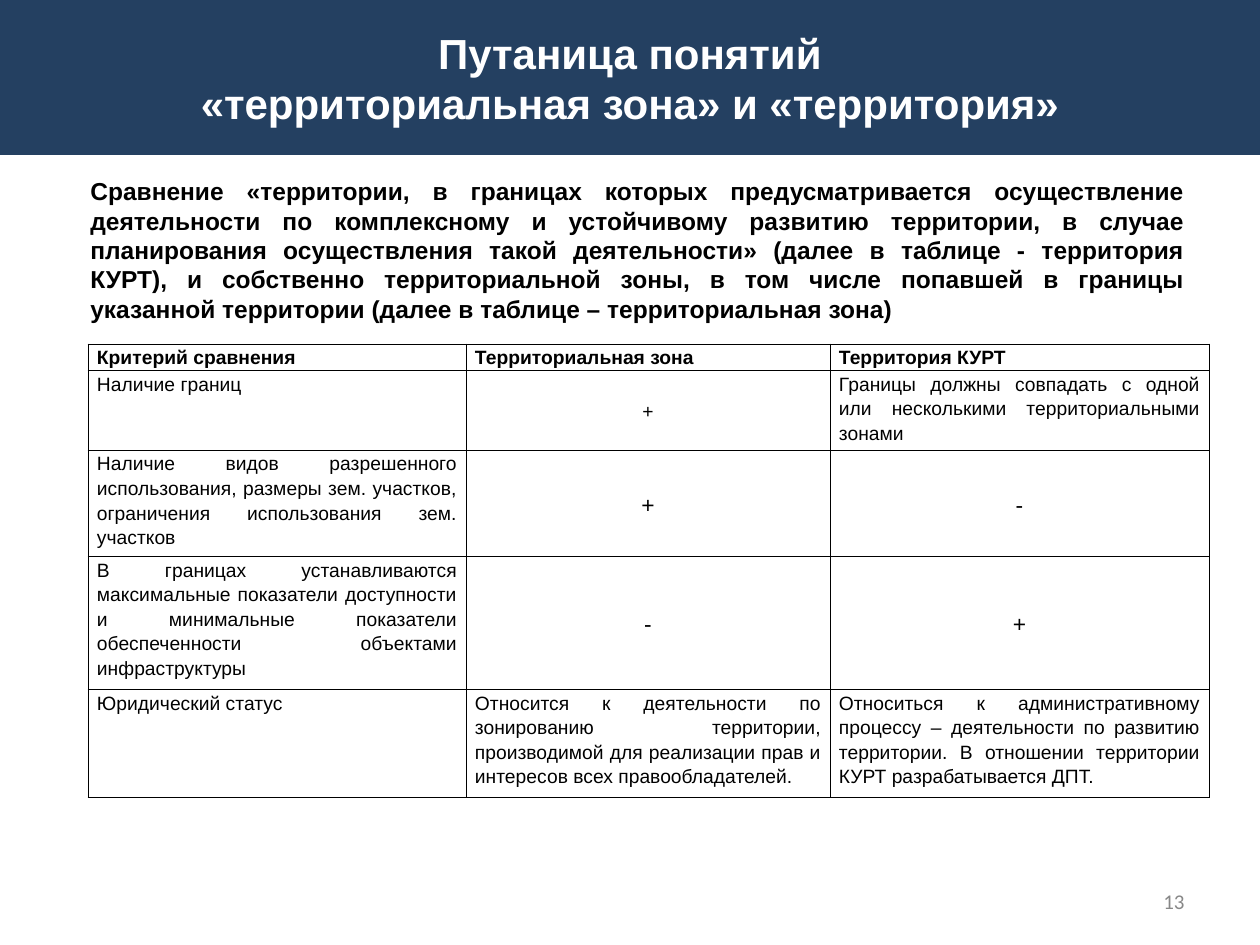
"""Builds a slide comparing a territorial zone with a development territory."""
from dataclasses import dataclass

from lxml.etree import SubElement
from pptx import Presentation
from pptx.dml.color import RGBColor as RGB
from pptx.enum.text import MSO_ANCHOR as Anchor, MSO_AUTO_SIZE as AutoSize, PP_ALIGN as Align
from pptx.oxml.ns import qn
from pptx.util import Emu, Pt


@dataclass(frozen=True)
class Theme:
    band: str = "244061"
    white: str = "FFFFFF"
    ink: str = "000000"
    muted: str = "888888"
    font: str = "Arial"
    number_font: str = "Calibri"
    title: int = 24
    lead: int = 14
    sign: int = 13
    number: int = 12
    cell: int = 11


theme = Theme()


def px(count):
    return Emu(round(count * 914400 / 126))


def style(frame, size, color, align, bold=False, font=theme.font):
    frame.word_wrap = True
    for paragraph in frame.paragraphs:
        paragraph.alignment = align
        for run in paragraph.runs:
            run.font.name, run.font.size, run.font.bold = font, Pt(size), bold
            run.font.color.rgb = RGB.from_string(color)


deck = Presentation()
deck.slide_width, deck.slide_height = px(1260), px(945)
slide = deck.slides.add_slide(deck.slide_layouts[5])

heading = slide.shapes.title
heading.left, heading.top, heading.width, heading.height = px(0), px(0), px(1260), px(155)
heading.fill.solid()
heading.fill.fore_color.rgb = RGB.from_string(theme.band)
heading.text_frame.text = "Путаница понятий\n«территориальная зона» и «территория»"
heading.text_frame.auto_size = AutoSize.NONE
heading.text_frame.vertical_anchor = Anchor.MIDDLE
style(heading.text_frame, theme.title, theme.white, Align.CENTER, bold=True)

lead = slide.shapes.add_textbox(px(63), px(170), px(1134), px(176)).text_frame
lead.text = (
    "Сравнение «территории, в границах которых предусматривается осуществление деятельности "
    "по комплексному и устойчивому развитию территории, в случае планирования осуществления "
    "такой деятельности» (далее в таблице - территория КУРТ), и собственно территориальной зоны, "
    "в том числе попавшей в границы указанной территории (далее в таблице – территориальная зона)"
)
style(lead, theme.lead, theme.ink, Align.JUSTIFY, bold=True)
lead.paragraphs[0].space_before = Pt(3.6)
lead.paragraphs[0]._p.get_or_add_pPr().set("marL", str(px(15)))

criteria = [
    ("Критерий сравнения", "Территориальная зона", "Территория КУРТ"),
    ("Наличие границ", "+",
     "Границы должны совпадать с одной или несколькими территориальными зонами"),
    ("Наличие видов разрешенного использования, размеры зем. участков, "
     "ограничения использования зем. участков", "+", "-"),
    ("В границах устанавливаются максимальные показатели доступности и минимальные "
     "показатели обеспеченности объектами инфраструктуры", "-", "+"),
    ("Юридический статус",
     "Относится к деятельности по зонированию территории, производимой для реализации "
     "прав и интересов всех правообладателей.",
     "Относиться к административному процессу – деятельности по развитию территории. "
     "В отношении территории КУРТ разрабатывается ДПТ."),
]
column_widths = [378, 364, 379]
row_heights = [26, 78, 105, 133, 108]

comparison = slide.shapes.add_table(
    len(row_heights), len(column_widths), px(88), px(344),
    px(sum(column_widths)), px(sum(row_heights))).table
comparison.first_row = comparison.horz_banding = False
for column, width in zip(comparison.columns, column_widths):
    column.width = px(width)

for row_index, (row, height, entries) in enumerate(zip(comparison.rows, row_heights, criteria)):
    row.height = px(height)
    for cell, entry in zip(row.cells, entries):
        is_sign = entry in ("+", "-")
        cell.text_frame.text = entry
        cell.margin_left = cell.margin_right = px(9)
        cell.margin_top = cell.margin_bottom = 0
        cell.vertical_anchor = Anchor.MIDDLE if is_sign else Anchor.TOP
        style(cell.text_frame, theme.sign if is_sign and row_index > 1 else theme.cell,
              theme.ink, Align.CENTER if is_sign else Align.JUSTIFY, bold=row_index == 0)
        cell.text_frame.paragraphs[0].line_spacing = 1.15
        properties = cell._tc.get_or_add_tcPr()
        for side in ("lnL", "lnR", "lnT", "lnB"):
            border = SubElement(properties, qn(f"a:{side}"), w=str(Pt(0.5)))
            SubElement(SubElement(border, qn("a:solidFill")), qn("a:srgbClr"), val=theme.ink)
        cell.fill.background()

page_number = slide.shapes.add_textbox(px(903), px(876), px(294), px(50)).text_frame
page_number.text = "13"
page_number.vertical_anchor = Anchor.MIDDLE
style(page_number, theme.number, theme.muted, Align.RIGHT, font=theme.number_font)

deck.save("out.pptx")
